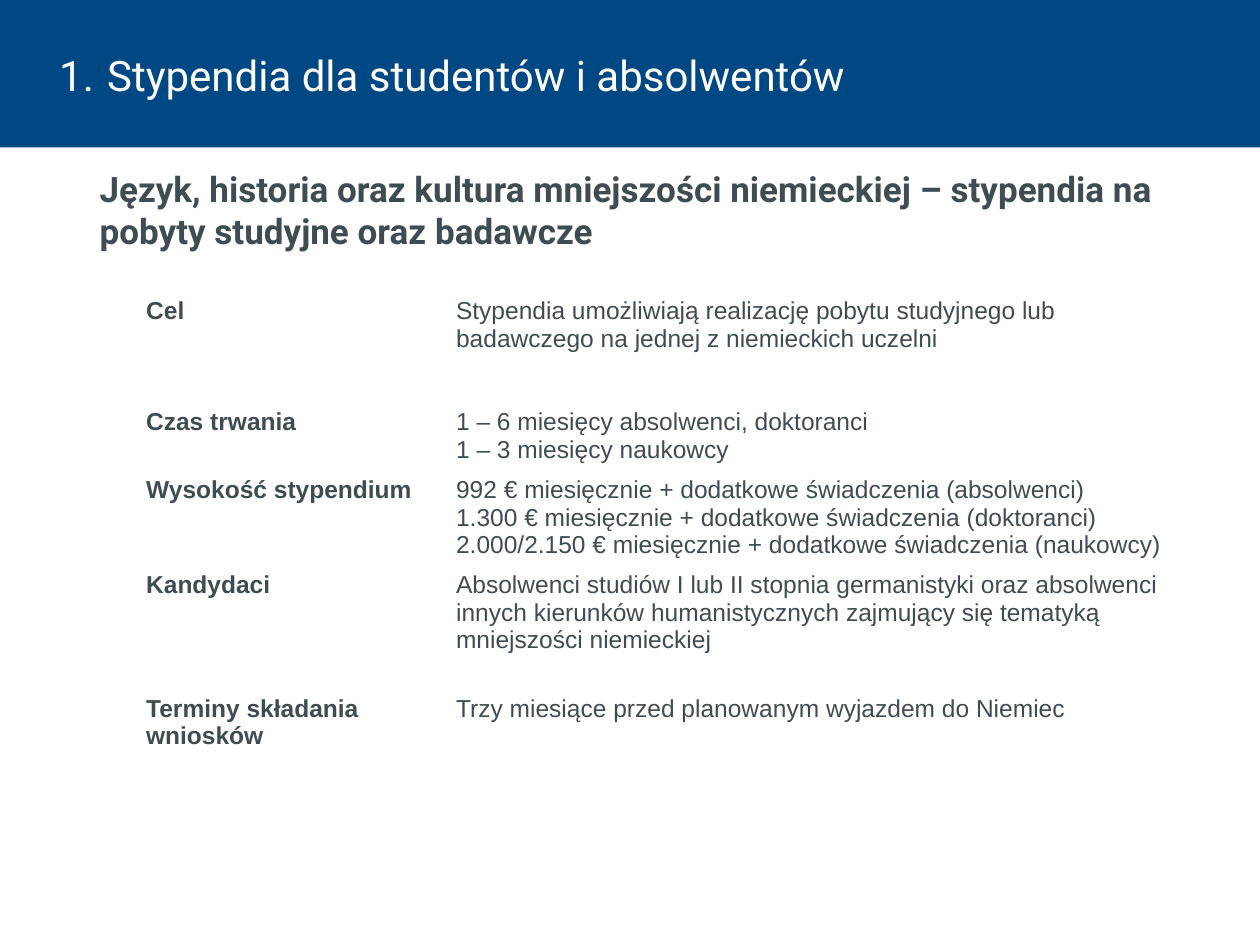
from pptx import Presentation
from pptx import util as u
from pptx.dml.color import RGBColor
from pptx.enum import text
from pptx.oxml import parse_xml
from pptx.oxml.ns import nsdecls

TITLE = "Stypendia dla studentów i absolwentów"
HEAD = ("Język, historia oraz kultura mniejszości niemieckiej – "
        "stypendia na pobyty studyjne oraz badawcze")
ROWS = [
    (0.88, "Cel", ["Stypendia umożliwiają realizację pobytu studyjnego lub "
                   "badawczego na jednej z niemieckich uczelni"]),
    (0.54, "Czas trwania", ["1 – 6 miesięcy absolwenci, doktoranci",
                            "1 – 3 miesięcy naukowcy"]),
    (0.75, "Wysokość stypendium", [
        "992 € miesięcznie + dodatkowe świadczenia (absolwenci)",
        "1.300 € miesięcznie + dodatkowe świadczenia (doktoranci)",
        "2.000/2.150 € miesięcznie + dodatkowe świadczenia (naukowcy)"]),
    (0.98, "Kandydaci", ["Absolwenci studiów I lub II stopnia germanistyki oraz "
                         "absolwenci innych kierunków humanistycznych zajmujący "
                         "się tematyką mniejszości niemieckiej"]),
    (1.3, "Terminy składania wniosków",
     ["Trzy miesiące przed planowanym wyjazdem do Niemiec"]),
]
COLS = (2.46, 5.96)
COLORS = {"blue": "004883", "ink": "3F4C52", "white": "FFFFFF"}


def color(name):
    return RGBColor.from_string(COLORS[name])


def style(frame, face, size, tone, bold=False):
    for para in frame.paragraphs:
        for run in para.runs:
            font = run.font
            font.name, font.size, font.bold = face, u.Pt(size), bold
            font.color.rgb = color(tone)


def inset(frame, left=0, top=0, right=0, bottom=0):
    frame.margin_left, frame.margin_top = u.Inches(left), u.Inches(top)
    frame.margin_right, frame.margin_bottom = u.Inches(right), u.Inches(bottom)
    frame.word_wrap = True
    frame.auto_size = text.MSO_AUTO_SIZE.NONE


def place(shape, *box):
    shape.left, shape.top, shape.width, shape.height = map(u.Inches, box)


def add_title(slide):
    title = slide.shapes.title
    place(title, 0, 0, 10, 1.17)
    title.fill.solid()
    title.fill.fore_color.rgb = color("blue")
    frame = title.text_frame
    frame.text = TITLE
    inset(frame, 0.47, 0.05, 0.1, 0.05)
    frame.vertical_anchor = text.MSO_ANCHOR.MIDDLE
    para = frame.paragraphs[0]
    props = para._p.get_or_add_pPr()
    props.set("marL", str(u.Inches(0.38)))
    props.set("indent", str(-u.Inches(0.38)))
    props.append(parse_xml(f'<a:buAutoNum {nsdecls("a")} type="arabicPeriod"/>'))
    para.alignment = text.PP_ALIGN.LEFT
    para.line_spacing = u.Pt(30)
    style(frame, "Roboto", 24, "white")


def add_head(slide):
    box = slide.shapes.add_textbox(*map(u.Inches, (0.79, 1.33, 8.42, 0.78)))
    box.text_frame.text = HEAD
    inset(box.text_frame)
    style(box.text_frame, "Roboto", 20, "ink", True)


def add_grid(slide):
    size = (1.06, 2.31, sum(COLS), sum(row[0] for row in ROWS))
    table = slide.shapes.add_table(
        len(ROWS), len(COLS), *map(u.Inches, size)).table
    table.first_row = table.horz_banding = False
    for col, width in zip(table.columns, COLS):
        col.width = u.Inches(width)
    for r, (height, label, lines) in enumerate(ROWS):
        table.rows[r].height = u.Inches(height)
        for c, words in enumerate((label, "\n".join(lines))):
            cell = table.cell(r, c)
            cell.text = words
            style(cell.text_frame, "Arial", 14, "ink", c == 0)
            props = cell._tc.get_or_add_tcPr()
            for side in "LRTB":
                props.append(parse_xml(
                    f'<a:ln{side} {nsdecls("a")} w="{u.Pt(1)}"><a:solidFill>'
                    f'<a:srgbClr val="{COLORS["white"]}"/></a:solidFill></a:ln{side}>'))
            cell.fill.background()


def main():
    deck = Presentation()
    deck.slide_width, deck.slide_height = u.Inches(10), u.Inches(7.5)
    slide = deck.slides.add_slide(deck.slide_layouts[5])
    add_title(slide)
    add_head(slide)
    add_grid(slide)
    deck.save("out.pptx")


if __name__ == "__main__":
    main()
